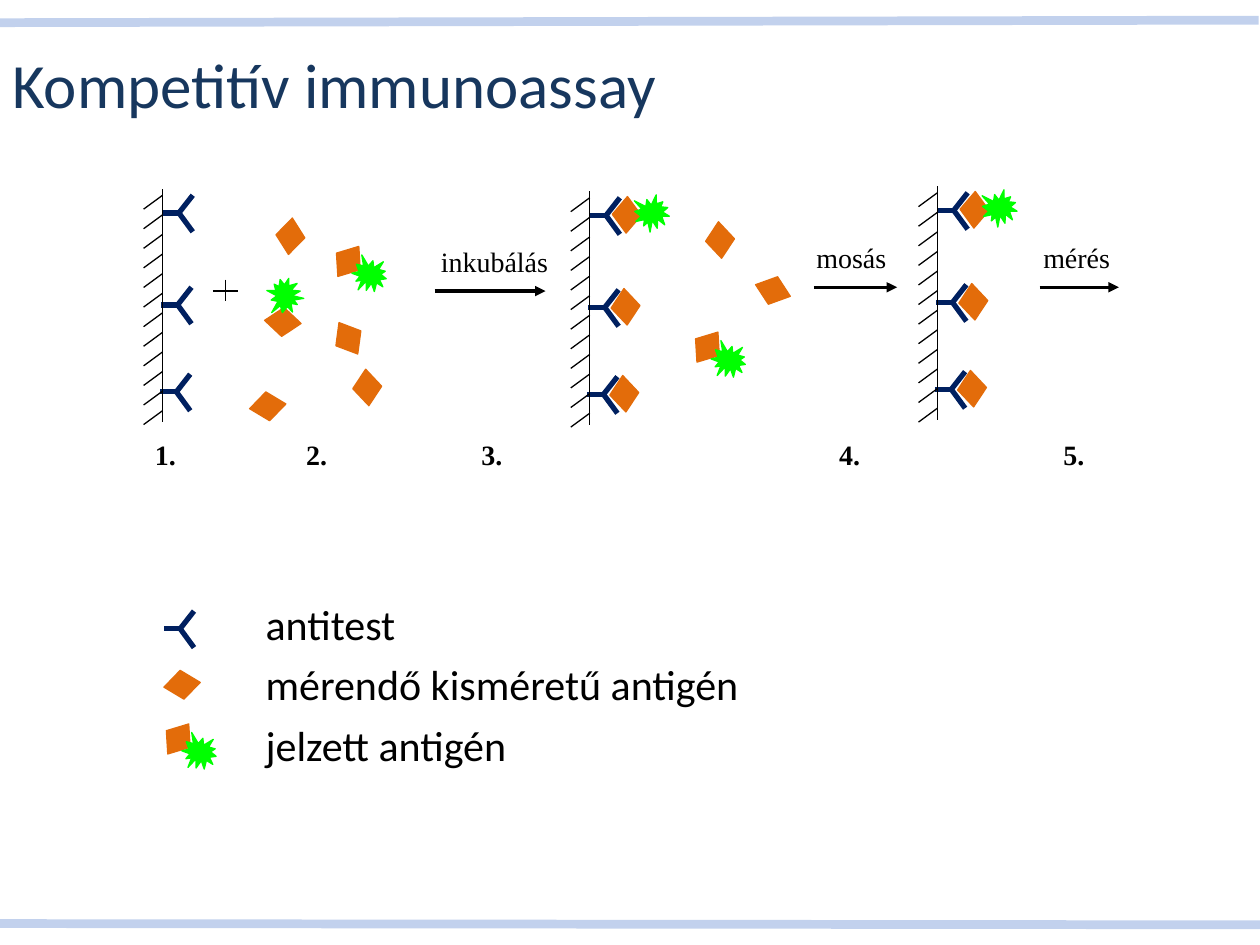
"""Build the slide on the steps of a competitive immunoassay."""
import pptx
import pptx.dml.color
import pptx.enum.shapes
import pptx.enum.text
import pptx.util
from lxml import etree
from pptx.oxml.ns import qn
from pptx.util import Inches

COLORS = {
    "frame": "C2D1ED",
    "title": "17375E",
    "text": "000000",
    "paper": "FFFFFF",
    "antibody": "002060",
    "antigen": "E36C0A",
    "marker": "00FF00",
}
ANTIBODY_OFFSETS = [(0, 0.19), (-0.01, 0.92), (-0.02, 1.61)]
BOUND_OFFSETS = [(0.15, 0.07), (0.14, 0.8), (0.13, 1.49)]
HATCH_COUNT = 12


def rgb(name):
    """Return the named colour."""
    return pptx.dml.color.RGBColor.from_string(COLORS[name])


def add_line(slide, start, end, color="text", width=0.75, arrow=False):
    """Draw a straight line, with an arrowhead at its end if asked."""
    line = slide.shapes.add_connector(
        pptx.enum.shapes.MSO_CONNECTOR.STRAIGHT,
        *(Inches(value) for value in (*start, *end)))
    line.line.color.rgb = rgb(color)
    line.line.width = pptx.util.Pt(width)
    properties = line._element.spPr
    if arrow:
        etree.SubElement(properties.find(qn("a:ln")), qn("a:tailEnd"), type="triangle")
    etree.SubElement(properties, qn("a:effectLst"))


def add_text(slide, text, box, font="Times New Roman", size=16, color="text",
             bold=False, fill=None, side_inset=0.1, spacing=None, anchor="TOP"):
    """Write text in a box, one paragraph a line."""
    label = slide.shapes.add_textbox(*(Inches(value) for value in box))
    if fill:
        label.fill.solid()
        label.fill.fore_color.rgb = rgb(fill)
    frame = label.text_frame
    frame.word_wrap = True
    frame.vertical_anchor = pptx.enum.text.MSO_ANCHOR[anchor]
    frame.margin_left = frame.margin_right = Inches(side_inset)
    frame.text = text
    for paragraph in frame.paragraphs:
        paragraph.line_spacing = spacing
        paragraph.font.name = font
        paragraph.font.size = pptx.util.Pt(size)
        paragraph.font.bold = bold
        paragraph.font.color.rgb = rgb(color)


def add_particle(slide, kind, left, top, width, height, color, rotation):
    """Draw a filled, rotated shape."""
    particle = slide.shapes.add_shape(
        kind, *(Inches(value) for value in (left, top, width, height)))
    particle.rotation = rotation
    particle.shadow.inherit = False
    particle.fill.solid()
    particle.fill.fore_color.rgb = rgb(color)
    particle.line.color.rgb = rgb(color)
    particle.line.width = pptx.util.Pt(0.75)


def add_antigen(slide, left, top, rotation=265):
    """Draw an antigen as a diamond."""
    add_particle(slide, pptx.enum.shapes.MSO_SHAPE.DIAMOND,
                 left, top, 0.29, 0.23, "antigen", rotation)


def add_marker(slide, left, top, rotation=27.4):
    """Draw the label of an antigen as a burst."""
    add_particle(slide, pptx.enum.shapes.MSO_SHAPE.EXPLOSION1,
                 left, top, 0.27, 0.29, "marker", rotation)


def add_labelled_antigen(slide, left, top):
    """Draw a free antigen with its label."""
    add_antigen(slide, left, top, 304.9)
    add_marker(slide, left + 0.18, top + 0.08)


def add_antibody(slide, left, middle):
    """Draw a Y-shaped antibody lying on its side."""
    fork = (left + 0.13, middle)
    add_line(slide, (left + 0.24, middle - 0.14), fork, "antibody", 3)
    add_line(slide, fork, (left + 0.24, middle + 0.15), "antibody", 3)
    add_line(slide, (left + 0.14, middle), (left, middle), "antibody", 3)


def add_wall(slide, x, top):
    """Draw a hatched wall with its three antibodies."""
    for dx, dy in ANTIBODY_OFFSETS:
        add_antibody(slide, x + dx, top + dy)
    add_line(slide, (x, top), (x, top + 1.85))
    for index in range(HATCH_COUNT):
        y = top + 0.05 + 1.71 * index / (HATCH_COUNT - 1)
        add_line(slide, (x, y), (x - 0.15, y + 0.11))


def add_bound_antigens(slide, x, top):
    """Draw the antigens held on a wall, the first one labelled."""
    for index, (dx, dy) in enumerate(BOUND_OFFSETS):
        add_antigen(slide, x + dx, top + dy, 265 if index else 272.2)
    add_marker(slide, x + 0.36, top + 0.03, 354.7)


def add_legend(slide):
    """Draw the legend symbols and their names."""
    add_antibody(slide, 1.3, 4.99)
    add_antigen(slide, 1.3, 5.32, 352.5)
    add_labelled_antigen(slide, 1.27, 5.75)
    add_text(slide, "antitest\nmérendő kisméretű antigén\njelzett antigén",
             (2.01, 4.62, 5, 1.54), font="Calibri", size=24, spacing=1.2)


def main():
    """Build and save the slide."""
    deck = pptx.Presentation()
    deck.slide_width, deck.slide_height = Inches(10), Inches(7.5)
    slide = deck.slides.add_slide(deck.slide_layouts[6])

    add_line(slide, (-0.02, 0.18), (9.99, 0.16), "frame", 5)
    add_line(slide, (0, 7.33), (10.04, 7.34), "frame", 5)
    add_text(slide, "Kompetitív immunoassay", (0, 0.28, 9, 0.76),
             font="Calibri", size=36, color="title", anchor="MIDDLE")

    for step, box in [("mérés", (8.28, 1.86, 0.85, 0.67)),
                      ("mosás", (6.48, 1.86, 1.15, 0.4)),
                      ("inkubálás", (3.5, 1.89, 1.16, 0.39))]:
        add_text(slide, step, box, fill="paper", side_inset=0)
    for start, end, y in [(3.45, 4.33, 2.31), (6.46, 7.12, 2.28), (8.25, 8.88, 2.28)]:
        add_line(slide, (start, y), (end, y), width=2, arrow=True)

    add_line(slide, (1.69, 2.31), (1.89, 2.31))
    add_line(slide, (1.79, 2.22), (1.79, 2.39))

    for x, top in [(1.29, 1.5), (4.68, 1.52), (7.44, 1.48)]:
        add_wall(slide, x, top)
        if x > 1.29:
            add_bound_antigens(slide, x, top)

    for left, top, rotation in [(2.16, 1.76, 276.1), (2.62, 2.57, 239.2),
                                (2.77, 2.96, 265), (1.98, 3.11, 352.5),
                                (2.1, 2.44, 184.9), (5.57, 1.79, 265),
                                (5.99, 2.19, 198.5)]:
        add_antigen(slide, left, top, rotation)
    add_marker(slide, 2.13, 2.2, 267.5)
    add_labelled_antigen(slide, 2.62, 1.96)
    add_labelled_antigen(slide, 5.47, 2.64)

    for number, left in enumerate([1.23, 2.43, 3.82, 6.66, 8.44], start=1):
        add_text(slide, f"{number}.", (left, 3.42, 0.39, 0.54),
                 bold=True, fill="paper", side_inset=0)

    add_legend(slide)
    deck.save("out.pptx")


if __name__ == "__main__":
    main()
